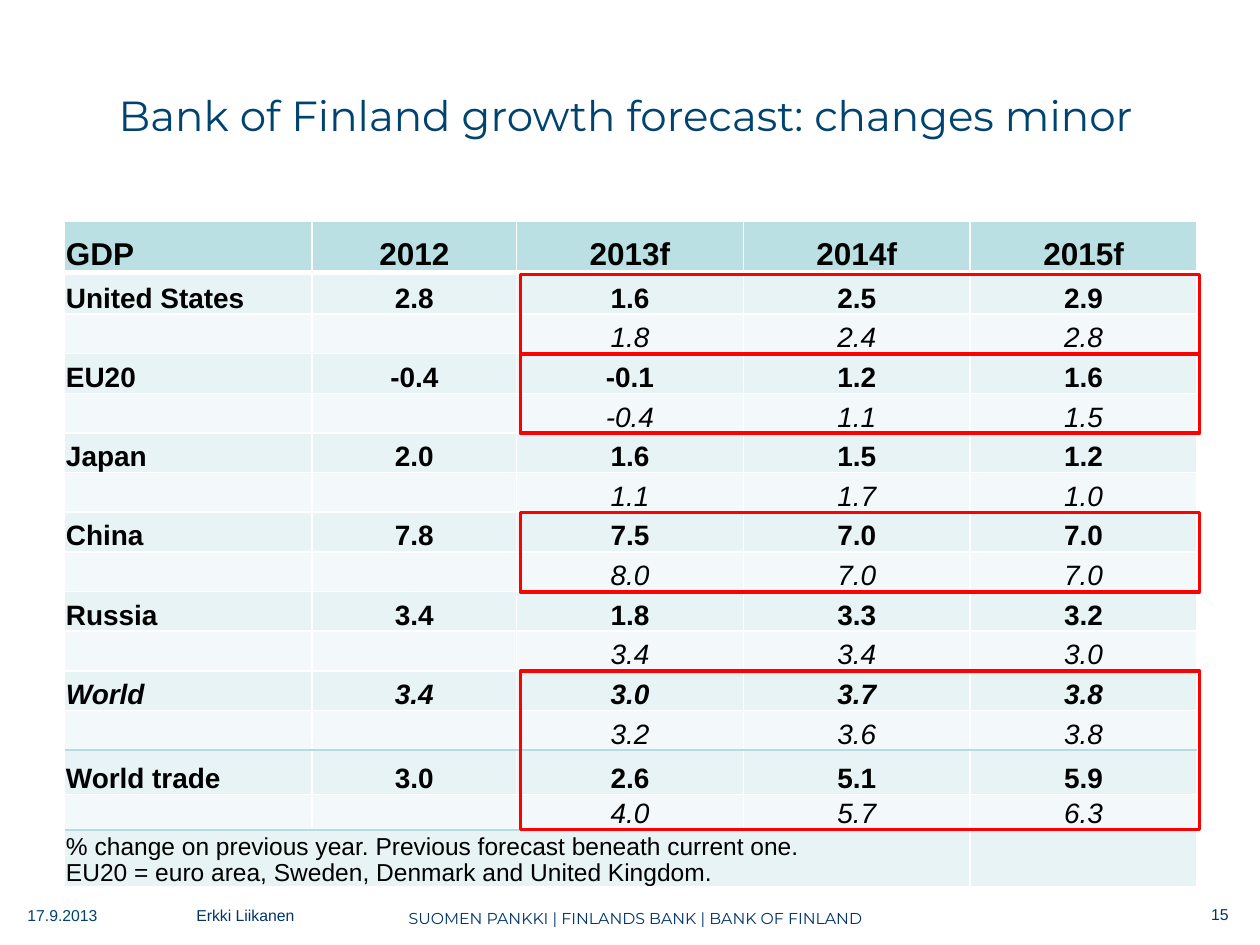
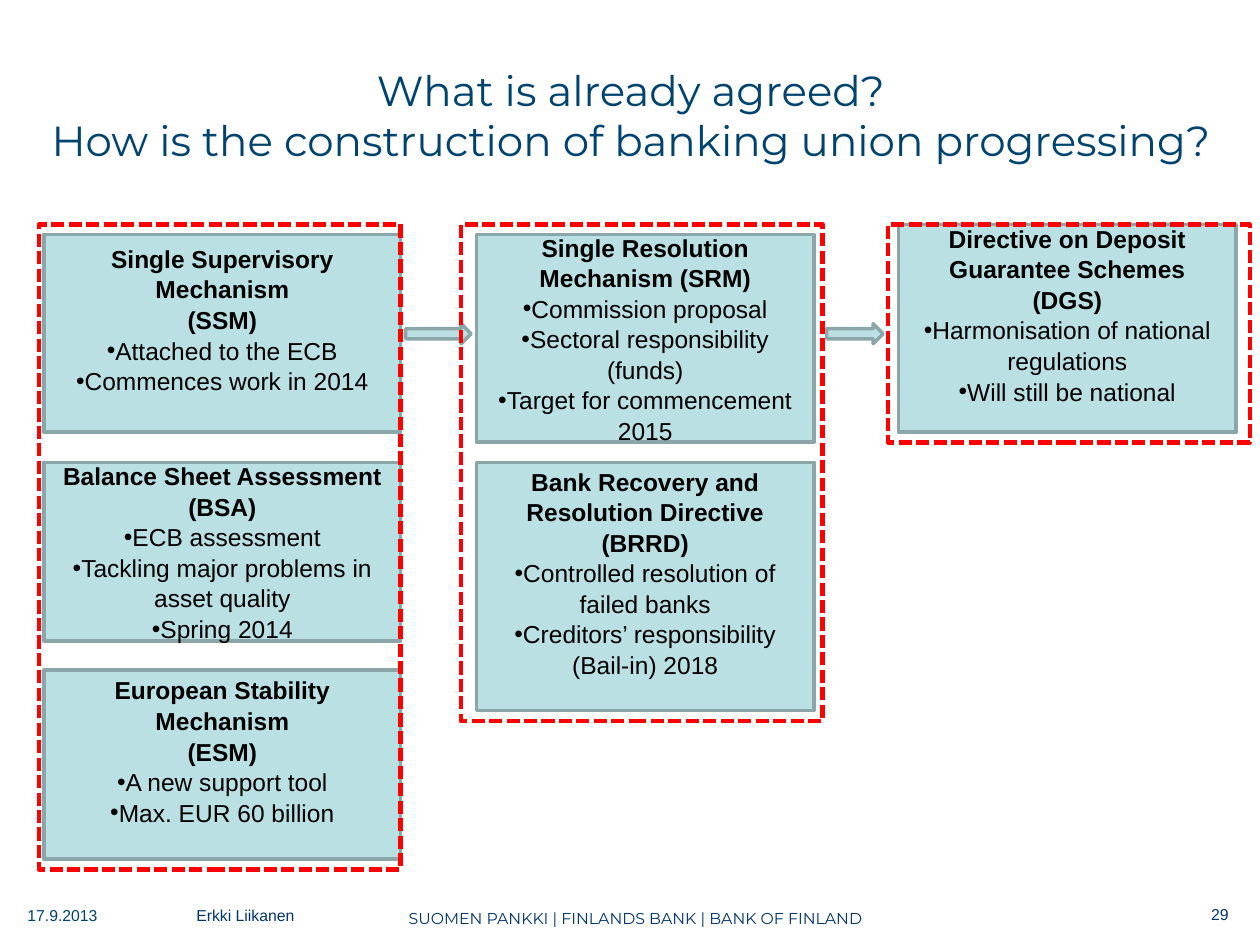
from lxml.etree import SubElement
from pptx import Presentation
from pptx.dml.color import RGBColor
from pptx.enum.dml import MSO_LINE as Dash
from pptx.enum.shapes import MSO_CONNECTOR as Connector, MSO_SHAPE as Preset
from pptx.enum.text import MSO_ANCHOR as Anchor, PP_ALIGN as Align
from pptx.oxml import parse_xml
from pptx.oxml.ns import nsdecls, qn
from pptx.util import Pt

COLORS = {
    "title": "00436F", "footer": "00356C", "text": "000000", "white": "FFFFFF",
    "teal": "BBE0E3", "current": "E7F3F4", "previous": "F3F9FA",
    "outline": "8AA6A8", "rule": "B6DCDF", "red": "FF0000",
}
BODY, HEADING = "Arial", "Montserrat"

# Growth forecast: area, current figures for 2012-2015, previous figures for 2013-2015
YEARS = ["GDP", "2012", "2013f", "2014f", "2015f"]
FORECASTS = [
    ("United States", "2.8 1.6 2.5 2.9", "1.8 2.4 2.8"),
    ("EU20", "-0.4 -0.1 1.2 1.6", "-0.4 1.1 1.5"),
    ("Japan", "2.0 1.6 1.5 1.2", "1.1 1.7 1.0"),
    ("China", "7.8 7.5 7.0 7.0", "8.0 7.0 7.0"),
    ("Russia", "3.4 1.8 3.3 3.2", "3.4 3.4 3.0"),
    ("World", "3.4 3.0 3.7 3.8", "3.2 3.6 3.8"),
    ("World trade", "3.0 2.6 5.1 5.9", "4.0 5.7 6.3"),
]
NOTES = ["% change on previous year. Previous forecast beneath current one.",
         "EU20 = euro area, Sweden, Denmark and United Kingdom."]
COLUMN_WIDTHS = [141.4, 116.8, 129.6, 129.6, 129.6]
ROW_HEIGHTS = [29.5, 23.8] + [22.65] * 11 + [25.4, 20, 31.5]
TABLE_LEFT, TABLE_TOP = 37, 126.2

# Frames around forecasts: first area, number of areas
FRAMED = [(0, 1), (1, 1), (3, 1), (5, 2)]
FRAME_TOP, AREA_HEIGHT = 157, 45.3

# Banking union cards: place, heading lines, points, closing line, space left below
LEFT_CARD, MIDDLE_CARD, RIGHT_CARD = (25.2, 203.8), (272.2, 193), (513.4, 193)
CARDS = [
    (LEFT_CARD, 133.9, 113, ["Single Supervisory Mechanism", "(SSM)"],
     ["Attached to the ECB", "Commences work in 2014"], [], 16),
    (LEFT_CARD, 264.2, 102.2, ["Balance Sheet Assessment", "(BSA)"],
     ["ECB assessment", "Tackling major problems in asset quality", "Spring 2014"], [], 0),
    (LEFT_CARD, 383, 108, ["European Stability Mechanism", "(ESM)"],
     ["A new support tool", "Max. EUR 60 billion"], [], 16),
    (MIDDLE_CARD, 133.9, 118.8, ["Single Resolution Mechanism (SRM)"],
     ["Commission proposal", "Sectoral responsibility (funds)",
      "Target for commencement 2015"], [], 0),
    (MIDDLE_CARD, 264.2, 141.8, ["Bank Recovery and Resolution Directive (BRRD)"],
     ["Controlled resolution of failed banks", "Creditors’ responsibility"],
     ["(Bail-in) 2018"], 16),
    (RIGHT_CARD, 128.2, 118.8, ["Directive on Deposit Guarantee Schemes", "(DGS)"],
     ["Harmonisation of national regulations", "Will still be national"], [], 16),
]
ARROWS = [(231.8, 37.4), (472.3, 32.4)]
STAGES = [(22.3, 368.6), (263.5, 283.7), (507.6, 124.6)]


def rgb(name):
    return RGBColor.from_string(COLORS[name])


def write(frame, lines, size=14, color="text", font=BODY, bold=False, italic=False,
          align=Align.CENTER, spacing=1.0, bullet=False):
    """Add each line as a paragraph, starting in the first one if it is empty."""
    for line in lines:
        first = frame.paragraphs[0]
        paragraph = frame.add_paragraph() if first.runs else first
        paragraph.alignment = align
        paragraph.line_spacing = spacing
        if bullet:
            props = paragraph._p.get_or_add_pPr()
            props.set("marL", "0")
            props.set("indent", "0")
            SubElement(props, qn("a:buFont")).set("typeface", BODY)
            SubElement(props, qn("a:buChar")).set("char", "•")
        run = paragraph.add_run()
        run.text = line
        run.font.size, run.font.name = Pt(size), font
        run.font.bold, run.font.italic = bold, italic
        run.font.color.rgb = rgb(color)


def add_label(slide, place, lines, anchor=Anchor.TOP, **text_format):
    frame = slide.shapes.add_textbox(*map(Pt, place)).text_frame
    frame.word_wrap = True
    frame.vertical_anchor = anchor
    write(frame, lines, **text_format)


def add_shape(slide, preset, place, line="outline", width=2, fill=None, dash=None):
    shape = slide.shapes.add_shape(preset, *map(Pt, place))
    shape.shadow.inherit = False
    if fill:
        shape.fill.solid()
        shape.fill.fore_color.rgb = rgb(fill)
    else:
        shape.fill.background()
    shape.line.color.rgb = rgb(line)
    shape.line.width = Pt(width)
    if dash:
        shape.line.dash_style = dash
    return shape


def add_rule(slide, left, right, y):
    rule = slide.shapes.add_connector(Connector.STRAIGHT, Pt(left), Pt(y), Pt(right), Pt(y))
    rule.line.color.rgb = rgb("rule")
    rule.line.width = Pt(1.25)
    SubElement(rule._element.spPr, qn("a:effectLst"))


def add_base(deck, title, title_left, number):
    """New slide with title, date, speaker, institution and page number."""
    slide = deck.slides.add_slide(deck.slide_layouts[6])
    add_label(slide, (title_left, 21.6, 700.6 - title_left, 90), title, Anchor.MIDDLE,
              size=24, color="title", font=HEADING, spacing=0.98)
    add_label(slide, (41.8, 515.5, 642.2, 20), ["SUOMEN PANKKI | FINLANDS BANK | BANK OF FINLAND"],
              size=9, color="footer", font=HEADING)
    for left, top, width, text, color, align in [
        (8.6, 514, 90.7, "17.9.2013", "title", Align.LEFT),
        (105.1, 514, 113, "Erkki Liikanen", "footer", Align.LEFT),
        (632.2, 513.4, 77, number, "footer", Align.RIGHT),
    ]:
        add_label(slide, (left, top, width, 24), [text], size=9, color=color, align=align)
    return slide


def style_cell(cell, fill, bottom=1):
    cell.fill.solid()
    cell.fill.fore_color.rgb = rgb(fill)
    cell.vertical_anchor = Anchor.BOTTOM
    cell.margin_left = cell.margin_right = cell.margin_top = Pt(0.72)
    cell.margin_bottom = 0
    cell.text_frame.paragraphs[0]._p.get_or_add_endParaRPr().set("sz", "1400")
    for place, side in enumerate("LRTB"):
        width = Pt(bottom if side == "B" else 1)
        cell._tc.tcPr.insert(place, parse_xml(
            f'<a:ln{side} {nsdecls("a")} w="{width}"><a:solidFill>'
            f'<a:srgbClr val="{COLORS["white"]}"/></a:solidFill></a:ln{side}>'))


def fill_row(table, row, values, fill, bottom=1, **text_format):
    for column, value in enumerate(values):
        cell = table.cell(row, column)
        style_cell(cell, fill, bottom)
        if value:
            align = Align.CENTER if column else Align.LEFT
            write(cell.text_frame, [value], align=align, **text_format)


def add_forecast_table(slide):
    table = slide.shapes.add_table(
        len(ROW_HEIGHTS), len(YEARS), Pt(TABLE_LEFT), Pt(TABLE_TOP),
        Pt(sum(COLUMN_WIDTHS)), Pt(sum(ROW_HEIGHTS))).table
    table.first_row = table.horz_banding = False
    for column, width in zip(table.columns, COLUMN_WIDTHS):
        column.width = Pt(width)
    for row, height in zip(table.rows, ROW_HEIGHTS):
        row.height = Pt(height)

    fill_row(table, 0, YEARS, "teal", bottom=3, size=18, bold=True)
    for index, (area, current, previous) in enumerate(FORECASTS):
        row = 1 + 2 * index
        fill_row(table, row, [area, *current.split()], "current",
                 size=16, bold=True, italic=area == "World")
        fill_row(table, row + 1, ["", "", *previous.split()], "previous",
                 size=16, italic=True)

    # Notes across the first four columns
    last = len(ROW_HEIGHTS) - 1
    fill_row(table, last, [""] * len(YEARS), "current")
    notes = table.cell(last, 0)
    notes.merge(table.cell(last, 3))
    write(notes.text_frame, NOTES, align=Align.LEFT, spacing=0.96)


def add_card(slide, column, top, height, heading, points, closing, space_below):
    left, width = column
    card = add_shape(slide, Preset.RECTANGLE, (left, top, width, height), fill="teal")
    frame = card.text_frame
    frame.word_wrap = True
    frame.vertical_anchor = Anchor.MIDDLE
    frame.margin_bottom = Pt(3.6 + space_below)
    write(frame, heading, bold=True, spacing=1.04)
    write(frame, points, bullet=True, spacing=1.04)
    write(frame, closing, spacing=1.04)


def build_forecast(deck):
    slide = add_base(deck, ["Bank of Finland growth forecast: changes minor"], 14.4, "15")
    add_forecast_table(slide)
    # Rules above and below world trade
    for areas_above in (6, 7):
        add_rule(slide, TABLE_LEFT, TABLE_LEFT + sum(COLUMN_WIDTHS),
                 FRAME_TOP + AREA_HEIGHT * areas_above)
    for first, count in FRAMED:
        add_shape(slide, Preset.RECTANGLE,
                  (297.4, FRAME_TOP + AREA_HEIGHT * first, 388, AREA_HEIGHT * count), "red")


def build_banking_union(deck):
    slide = add_base(deck, ["What is already agreed?",
                            "How is the construction of banking union progressing?"], 20.2, "29")
    for card in CARDS:
        add_card(slide, *card)
    for left, width in ARROWS:
        add_shape(slide, Preset.RIGHT_ARROW, (left, 185, width, 11.5), fill="teal")
    # Dashed frame around each stage
    for left, height in STAGES:
        add_shape(slide, Preset.RECTANGLE, (left, 128.2, 206.6, height),
                  "red", 2.5, dash=Dash.SQUARE_DOT)


def main():
    deck = Presentation()
    deck.slide_width, deck.slide_height = Pt(720), Pt(540)
    build_forecast(deck)
    build_banking_union(deck)
    deck.save("out.pptx")


if __name__ == "__main__":
    main()
